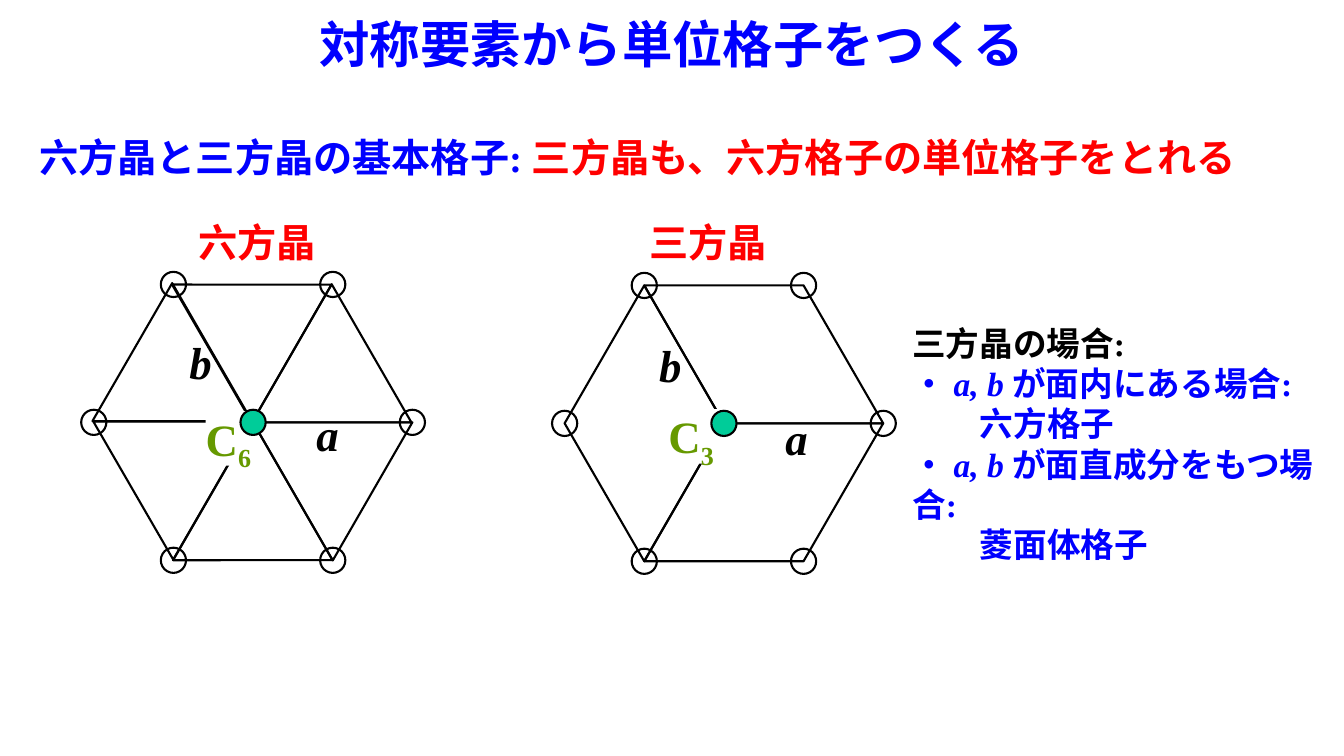
import math

import pptx
import pptx.dml.color
import pptx.enum.shapes
import pptx.enum.text
import pptx.util

Inches = pptx.util.Inches
Pt = pptx.util.Pt
RGBColor = pptx.dml.color.RGBColor
Shape = pptx.enum.shapes.MSO_SHAPE
Align = pptx.enum.text.PP_ALIGN
Anchor = pptx.enum.text.MSO_ANCHOR

BLACK = RGBColor(0x00, 0x00, 0x00)
WHITE = RGBColor(0xFF, 0xFF, 0xFF)
BLUE = RGBColor(0x00, 0x00, 0xFF)
RED = RGBColor(0xFF, 0x00, 0x00)
OLIVE = RGBColor(0x66, 0x99, 0x00)
GREEN = RGBColor(0x00, 0xCC, 0x99)

SIDE = 1.58
TRIANGLE_HEIGHT = 1.37
ATOM = 0.25


def hexagon_corner(center, degrees):
    angle = math.radians(degrees)
    return center[0] + SIDE * math.cos(angle), center[1] - SIDE * math.sin(angle)


class LatticeSlide:
    """Holds the text and line style together with the slide being built."""

    font_name = "Times New Roman"
    line_width = Pt(1.5)

    def __init__(self, presentation):
        self.slide = presentation.slides.add_slide(presentation.slide_layouts[5])
        self.shapes = self.slide.shapes

    def style(self, paragraph, size, color, italic=False):
        font = paragraph.font
        font.name = self.font_name
        font.size = Pt(size)
        font.bold = True
        font.italic = italic
        font.color.rgb = color

    def outline(self, shape, fill=None):
        shape.shadow.inherit = False
        shape.line.color.rgb = BLACK
        shape.line.width = self.line_width
        if fill is None:
            shape.fill.background()
        else:
            shape.fill.solid()
            shape.fill.fore_color.rgb = fill

    def title(self, box, parts, size):
        """Fill the title placeholder with (text, colour) parts."""
        heading = self.shapes.title
        heading.left, heading.top, heading.width, heading.height = map(Inches, box)
        frame = heading.text_frame
        frame.auto_size = pptx.enum.text.MSO_AUTO_SIZE.NONE
        frame.vertical_anchor = Anchor.MIDDLE
        paragraph = frame.paragraphs[0]
        paragraph.alignment = Align.LEFT
        self.style(paragraph, size, parts[0][1])
        for text, color in parts:
            run = paragraph.add_run()
            run.text = text
            run.font.color.rgb = color

    def text(self, box, text, size, color, italic=False, wrap=True):
        frame = self.shapes.add_textbox(*map(Inches, box)).text_frame
        frame.word_wrap = wrap
        frame.text = text
        self.style(frame.paragraphs[0], size, color, italic)
        return frame

    def case_list(self, box, lines, size):
        """Add lines of (colour, indent, [(text, italic), ...])."""
        frame = self.shapes.add_textbox(*map(Inches, box)).text_frame
        frame.word_wrap = True
        for index, (color, indent, parts) in enumerate(lines):
            paragraph = frame.add_paragraph() if index else frame.paragraphs[0]
            self.style(paragraph, size, color)
            paragraph._p.get_or_add_pPr().set("marL", str(Inches(indent)))
            for text, italic in parts:
                run = paragraph.add_run()
                run.text = text
                run.font.italic = italic

    def axis_label(self, left, top, order):
        """Add a rotation axis symbol such as C6 on a white patch."""
        patch = self.shapes.add_shape(
            Shape.RECTANGLE, Inches(left), Inches(top), Inches(0.51), Inches(0.54))
        patch.shadow.inherit = False
        patch.fill.solid()
        patch.fill.fore_color.rgb = WHITE
        patch.line.fill.background()
        frame = patch.text_frame
        frame.margin_left = frame.margin_right = 0
        frame.margin_top = frame.margin_bottom = 0
        frame.vertical_anchor = Anchor.TOP
        paragraph = frame.paragraphs[0]
        paragraph.alignment = Align.LEFT
        self.style(paragraph, 32, OLIVE)
        paragraph.add_run().text = "C"
        subscript = paragraph.add_run()
        subscript.text = order
        subscript._r.get_or_add_rPr().set("baseline", "-25000")

    def triangle(self, left, top, rotation):
        cell = self.shapes.add_shape(
            Shape.ISOSCELES_TRIANGLE, Inches(left), Inches(top),
            Inches(SIDE), Inches(TRIANGLE_HEIGHT))
        cell.rotation = rotation
        self.outline(cell)

    def rhombus(self, center, start):
        """Draw the cell from the center over three corners from start degrees."""
        corners = [hexagon_corner(center, start + step) for step in (0, 60, 120)]
        builder = self.shapes.build_freeform(*map(Inches, center))
        builder.add_line_segments(
            [(Inches(x), Inches(y)) for x, y in corners], close=True)
        self.outline(builder.convert_to_shape())

    def atom(self, center, fill=None):
        x, y = center
        circle = self.shapes.add_shape(
            Shape.OVAL, Inches(x - ATOM / 2), Inches(y - ATOM / 2),
            Inches(ATOM), Inches(ATOM))
        self.outline(circle, fill)

    def corner_atoms(self, center):
        for degrees in range(0, 360, 60):
            self.atom(hexagon_corner(center, degrees))


def main():
    presentation = pptx.Presentation()
    presentation.slide_width = Inches(13.33)
    presentation.slide_height = Inches(7.5)
    page = LatticeSlide(presentation)

    topic = page.text((0, 0, 13.33, 0.87), "対称要素から単位格子をつくる", 36, BLUE)
    topic.vertical_anchor = Anchor.MIDDLE
    topic.paragraphs[0].alignment = Align.CENTER
    page.title((0.29, 1.15, 12.51, 0.81), [
        ("六方晶と三方晶の基本格子: ", BLUE),
        ("三方晶も、六方格子の単位格子をとれる", RED)], 28)

    hexagonal, trigonal = (2.51, 4.19), (7.18, 4.2)
    for left, top, rotation in [
            (2.5, 2.82, 0), (0.72, 3.15, 240), (0.73, 3.84, 300),
            (1.52, 4.53, 240), (2.51, 4.19, 180), (1.51, 2.48, 300)]:
        page.triangle(left, top, rotation)
    for start in (0, 120, 240):
        page.rhombus(trigonal, start)

    for center, name, name_left, order, axis_left, axis_top in [
            (hexagonal, "六方晶", 1.87, "6", 2.04, 4.08),
            (trigonal, "三方晶", 6.34, "3", 6.63, 4.06)]:
        page.corner_atoms(center)
        page.text((name_left, 2.12, 1.39, 0.57), name, 28, RED, wrap=False)
        page.axis_label(axis_left, axis_top, order)
        page.atom(center, GREEN)

    for vector, left, top in [
            ("a", 3.04, 3.99), ("b", 1.78, 3.27),
            ("a", 7.69, 4.03), ("b", 6.44, 3.3)]:
        page.text((left, top, 0.44, 0.64), vector, 32, BLACK, italic=True)

    page.case_list((8.95, 3.15, 4.38, 2.12), [
        (BLACK, 0, [("三方晶の場合:", False)]),
        (BLUE, 0, [("・ ", False), ("a, b ", True), ("が面内にある場合:", False)]),
        (BLUE, 0.67, [("六方格子", False)]),
        (BLUE, 0, [("・ ", False), ("a, b ", True), ("が面直成分をもつ場合:", False)]),
        (BLUE, 0.67, [("菱面体格子", False)])], 24)

    presentation.save("out.pptx")


if __name__ == "__main__":
    main()
